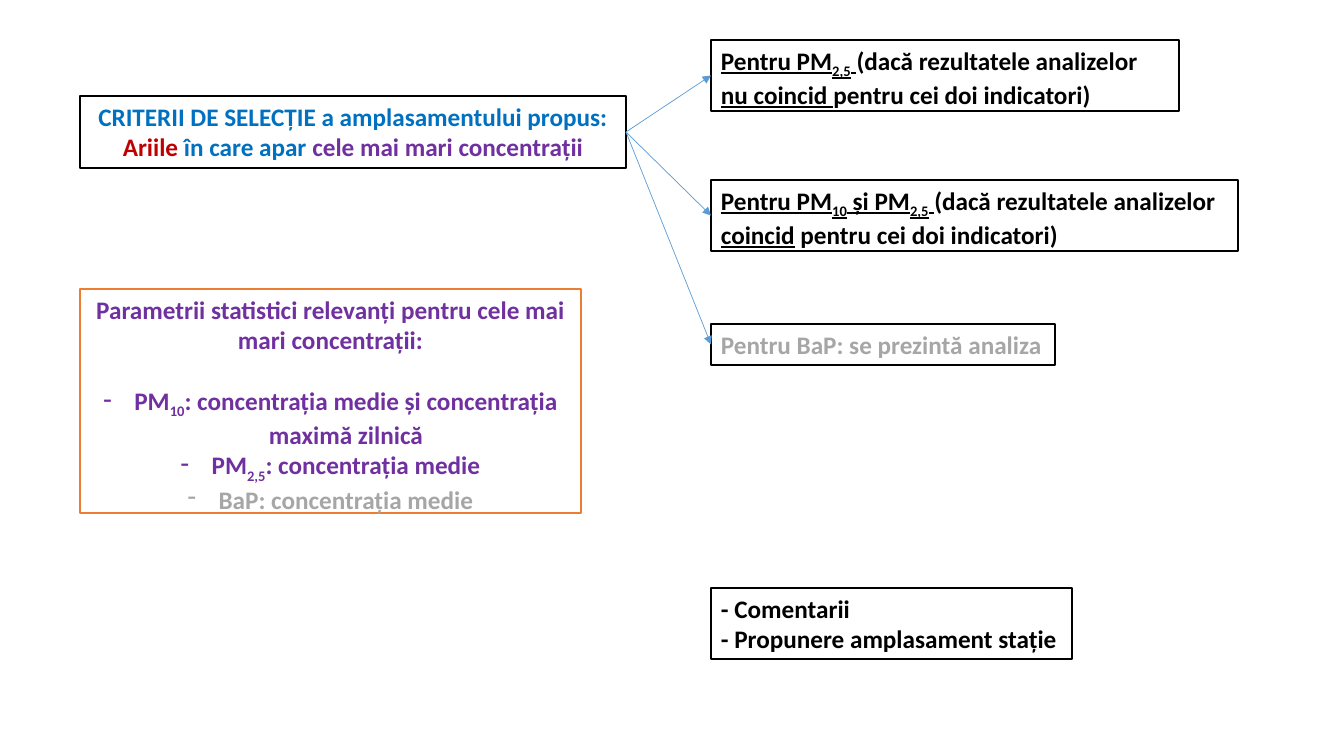
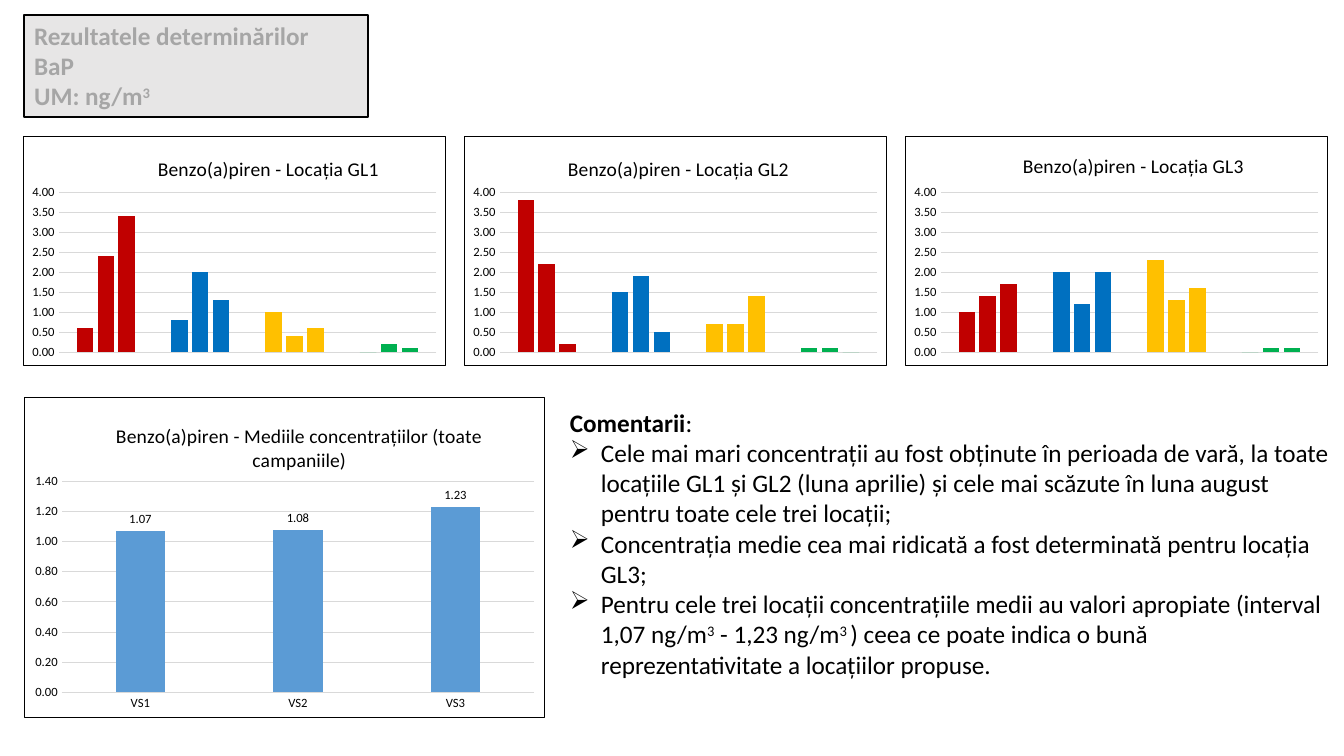
from lxml import etree
from pptx import Presentation
from pptx import util as u
from pptx.chart import data as chart_data
from pptx.dml.color import RGBColor
from pptx.enum import chart as charts, shapes, text
from pptx.oxml import parse_xml
from pptx.oxml.ns import nsdecls, qn

PX = 914400 / 100.8
FONT = "Calibri"
BLACK, WHITE, GREY, LIGHT_GREY = "000000", "FFFFFF", "A6A6A6", "E7E6E6"
GRID, ORANGE, LIGHT_BLUE = "D9D9D9", "ED7D31", "5B9BD5"
RED, BLUE, PURPLE = "C00000", "0070C0", "7030A0"
CAMPAIGN_COLORS = [RED, BLUE, "FFC000", "00B050"]

SUB, SUPER, LINE = {"baseline": -25}, {"baseline": 30}, {"underline": True}
LINE_SUB = {**LINE, **SUB}
BULLET_INDENT = 31

# A text is a list of paragraphs: (settings, runs); a run is a string or (string, style).
CRITERIA = [
    ({"color": BLUE, "center": True}, ["CRITERII DE SELECȚIE a amplasamentului propus:"]),
    ({"color": BLUE, "center": True}, [
        ("Ariile", {"color": RED}), " în care apar ",
        ("cele mai mari concentrații", {"color": PURPLE})]),
]
PURPLE_CENTER = {"color": PURPLE, "center": True}
PURPLE_DASH = {**PURPLE_CENTER, "bullet": "-"}
PARAMETERS = [
    ({**PURPLE_CENTER, "after": 22},
     ["Parametrii statistici relevanți pentru cele mai mari concentrații:"]),
    (PURPLE_DASH, ["PM", ("10", SUB), ": concentrația medie și concentrația maximă zilnică"]),
    (PURPLE_DASH, ["PM", ("2,5", SUB), ": concentrația medie"]),
    ({**PURPLE_DASH, "color": GREY}, ["BaP: concentrația medie"]),
]
PROPOSAL = [({}, ["- Comentarii"]), ({}, ["- Propunere amplasament stație"])]
CASES = [  # top, width, height, text
    (40, 468, 71, [({}, [
        ("Pentru PM", LINE), ("2,5", LINE_SUB), (" ", LINE), "(dacă rezultatele analizelor ",
        ("nu coincid ", LINE), "pentru cei doi indicatori)"])]),
    (180, 527, 71, [({}, [
        ("Pentru PM", LINE), ("10", LINE_SUB), (" și PM", LINE), ("2,5", LINE_SUB), (" ", LINE),
        "(dacă rezultatele analizelor ", ("coincid", LINE), " pentru cei doi indicatori)"])]),
    (324, 344, 41, [({"color": GREY}, ["Pentru BaP: se prezintă analiza"])]),
]
CASES_LEFT = 711

RESULTS = [
    ({"color": GREY}, ["Rezultatele determinărilor"]),
    ({"color": GREY}, ["BaP"]),
    ({"color": GREY}, ["UM: ng/m", ("3", SUPER)]),
]
ARROW_BULLET = {"bold": False, "bullet": "➢"}
COMMENTS = [
    ({"bold": False}, [("Comentarii", {"bold": True}), ":"]),
    (ARROW_BULLET, ["Cele mai mari concentrații au fost obținute în perioada de vară, la toate "
                    "locațiile GL1 și GL2 (luna aprilie) și cele mai scăzute în luna august "
                    "pentru toate cele trei locații;"]),
    (ARROW_BULLET, ["Concentrația medie cea mai ridicată a fost determinată pentru locația GL3;"]),
    (ARROW_BULLET, [
        "Pentru cele trei locații concentrațiile medii au valori apropiate (interval 1,07 ng/m",
        ("3", SUPER), " - 1,23 ng/m", ("3 ", SUPER),
        ") ceea ce poate indica o bună reprezentativitate a locațiilor propuse."]),
]
LOCATIONS = [  # name, title offset, one list per series
    ("GL1", (131, 15), [[0.6, 0.8, 1, 0], [2.4, 2, 0.4, 0.2], [3.4, 1.3, 0.6, 0.1]]),
    ("GL2", (100, 15), [[3.8, 1.5, 0.7, 0.1], [2.2, 1.9, 0.7, 0.1], [0.2, 0.5, 1.4, 0]]),
    ("GL3", (114, 12), [[1, 2, 2.3, 0], [1.4, 1.2, 1.3, 0.1], [1.7, 2, 1.6, 0.1]]),
]
LOCATION_LEFT, LOCATION_STEP = 23, 441
MEANS = [1.07, 1.08, 1.23]


def px(value):
    return u.Emu(round(value * PX))


def rgb(color):
    return RGBColor.from_string(color)


def paint(shape, fill, line):
    shape.fill.solid()
    shape.fill.fore_color.rgb = rgb(fill)
    shape.line.color.rgb = rgb(line)
    shape.line.width = u.Pt(1)


def set_font(font, size, color=BLACK, bold=False):
    font.name, font.size, font.bold = FONT, u.Pt(size), bold
    font.color.rgb = rgb(color)


def write(shape, paragraphs):
    frame = shape.text_frame
    frame.word_wrap = True
    frame.auto_size = text.MSO_AUTO_SIZE.NONE
    frame.vertical_anchor = text.MSO_ANCHOR.TOP
    for index, (settings, runs) in enumerate(paragraphs):
        paragraph = frame.add_paragraph() if index else frame.paragraphs[0]
        centered = settings.get("center")
        paragraph.alignment = text.PP_ALIGN.CENTER if centered else text.PP_ALIGN.LEFT
        if "bullet" in settings:
            properties = paragraph._p.get_or_add_pPr()
            properties.set("marL", str(px(BULLET_INDENT)))
            properties.set("indent", str(-px(BULLET_INDENT)))
            etree.SubElement(properties, qn("a:buChar")).set("char", settings["bullet"])
        if "after" in settings:
            paragraph.space_after = u.Pt(settings["after"])
        set_font(paragraph.font, 18, settings.get("color", BLACK), settings.get("bold", True))
        for item in runs:
            words, style = (item, {}) if isinstance(item, str) else item
            run = paragraph.add_run()
            run.text = words
            if "color" in style:
                run.font.color.rgb = rgb(style["color"])
            if "bold" in style:
                run.font.bold = style["bold"]
            if "underline" in style:
                run.font.underline = True
            if "baseline" in style:
                run._r.get_or_add_rPr().set("baseline", str(style["baseline"] * 1000))


def add_text(slide, box, paragraphs, fill=None, line=BLACK):
    shape = slide.shapes.add_textbox(*map(px, box))
    if fill:
        paint(shape, fill, line)
    write(shape, paragraphs)
    return shape


def add_titled_slide(presentation, box, paragraphs, fill):
    slide = presentation.slides.add_slide(presentation.slide_layouts[5])
    title = slide.shapes.title
    title.left, title.top, title.width, title.height = map(px, box)
    paint(title, fill, BLACK)
    write(title, paragraphs)
    return slide


def add_arrow(slide, source, target):
    """Join the right side of source to the left side of target."""
    arrow = slide.shapes.add_connector(shapes.MSO_CONNECTOR.STRAIGHT, 0, 0, 0, 0)
    arrow.begin_connect(source, 3)
    arrow.end_connect(target, 1)
    arrow.line.color.rgb = rgb(LIGHT_BLUE)
    arrow.line.width = u.Pt(0.5)
    etree.SubElement(arrow.line._get_or_add_ln(), qn("a:tailEnd")).set("type", "triangle")
    etree.SubElement(arrow._element.spPr, qn("a:effectLst"))


def manual_layout(box, chart_box, inner=False):
    """Layout element for a box given in px from the chart's corner."""
    values = [("layoutTarget", "inner")] if inner else []
    values += [("xMode", "edge"), ("yMode", "edge")]
    values += [(name, round(length / chart_box[2 + index % 2], 4))
               for index, (name, length) in enumerate(zip("xywh", box))]
    parts = "".join(f'<c:{name} val="{value}"/>' for name, value in values)
    return parse_xml(f'<c:layout {nsdecls("c")}><c:manualLayout>{parts}'
                     '</c:manualLayout></c:layout>')


def replace_layout(parent, layout, position):
    for old in parent.findall(qn("c:layout")):
        parent.remove(old)
    parent.insert(position, layout)


def thin_line(line):
    line.color.rgb = rgb(GRID)
    line.width = u.Pt(0.75)


def add_columns(slide, box, title, title_at, plot_box, categories, series, top, step):
    data = chart_data.CategoryChartData(number_format="0.00")
    data.categories = categories
    for number, values in enumerate(series, 1):
        data.add_series(f"Series {number}", values)
    chart = slide.shapes.add_chart(
        charts.XL_CHART_TYPE.COLUMN_CLUSTERED, *map(px, box), data).chart
    chart.has_legend = False
    set_font(chart.font, 10)
    title_frame = chart.chart_title.text_frame
    title_frame.text = title
    set_font(title_frame.paragraphs[0].font, 14)
    replace_layout(chart.chart_title._element, manual_layout(title_at, box), 1)

    plot = chart.plots[0]
    plot.gap_width, plot.overlap, plot.vary_by_categories = 219, -27, False
    replace_layout(chart._chartSpace.chart.plotArea, manual_layout(plot_box, box, True), 0)
    for axis in (chart.category_axis, chart.value_axis):
        axis.major_tick_mark = charts.XL_TICK_MARK.NONE
        set_font(axis.tick_labels.font, 9)
    thin_line(chart.category_axis.format.line)
    axis = chart.value_axis
    axis.minimum_scale, axis.maximum_scale, axis.major_unit = 0, top, step
    axis.tick_labels.number_format = "0.00"
    axis.tick_labels.number_format_is_linked = False
    axis.format.line.fill.background()
    thin_line(axis.major_gridlines.format.line)

    chart._chartSpace.chart.addnext(parse_xml(
        f'<c:spPr {nsdecls("c", "a")}><a:solidFill><a:srgbClr val="{WHITE}"/></a:solidFill>'
        f'<a:ln w="{u.Pt(1)}"><a:solidFill><a:srgbClr val="{BLACK}"/></a:solidFill></a:ln>'
        '</c:spPr>'))
    return chart


def fill_solid(part, color):
    part.format.fill.solid()
    part.format.fill.fore_color.rgb = rgb(color)


def build_criteria(presentation):
    slide = add_titled_slide(presentation, (80, 96, 546, 72), CRITERIA, WHITE)
    add_text(slide, (80, 289, 501, 224), PARAMETERS, WHITE, ORANGE)
    add_text(slide, (CASES_LEFT, 588, 361, 71), PROPOSAL, WHITE)
    for top, width, height, paragraphs in CASES:
        case = add_text(slide, (CASES_LEFT, top, width, height), paragraphs, WHITE)
        add_arrow(slide, slide.shapes.title, case)


def build_results(presentation):
    slide = add_titled_slide(presentation, (24, 15, 344, 102), RESULTS, LIGHT_GREY)
    for index, (name, title_at, series) in enumerate(LOCATIONS):
        box = (LOCATION_LEFT + index * LOCATION_STEP, 136, 423, 230)
        chart = add_columns(slide, box, f"Benzo(a)piren - Locația {name}", title_at,
                            (35, 56, 379, 161), ["1", "2", "3", "4"], series, 4, 0.5)
        chart.category_axis.visible = False
        for columns in chart.series:
            for point, color in enumerate(CAMPAIGN_COLORS):
                fill_solid(columns.points[point], color)

    chart = add_columns(slide, (24, 397, 521, 321),
                        "Benzo(a)piren - Mediile concentrațiilor (toate campaniile)", (88, 21),
                        (37, 84, 474, 212), ["VS1", "VS2", "VS3"], [MEANS], 1.4, 0.2)
    fill_solid(chart.series[0], LIGHT_BLUE)
    plot = chart.plots[0]
    plot.has_data_labels = True
    labels = plot.data_labels
    labels.show_value = True
    labels.number_format, labels.number_format_is_linked = "0.00", False
    labels.position = charts.XL_LABEL_POSITION.OUTSIDE_END
    set_font(labels.font, 9)
    add_text(slide, (560, 402, 784, 285), COMMENTS)


def main():
    presentation = Presentation()
    presentation.slide_width, presentation.slide_height = px(1344), px(756)
    build_criteria(presentation)
    build_results(presentation)
    presentation.save("out.pptx")


if __name__ == "__main__":
    main()
